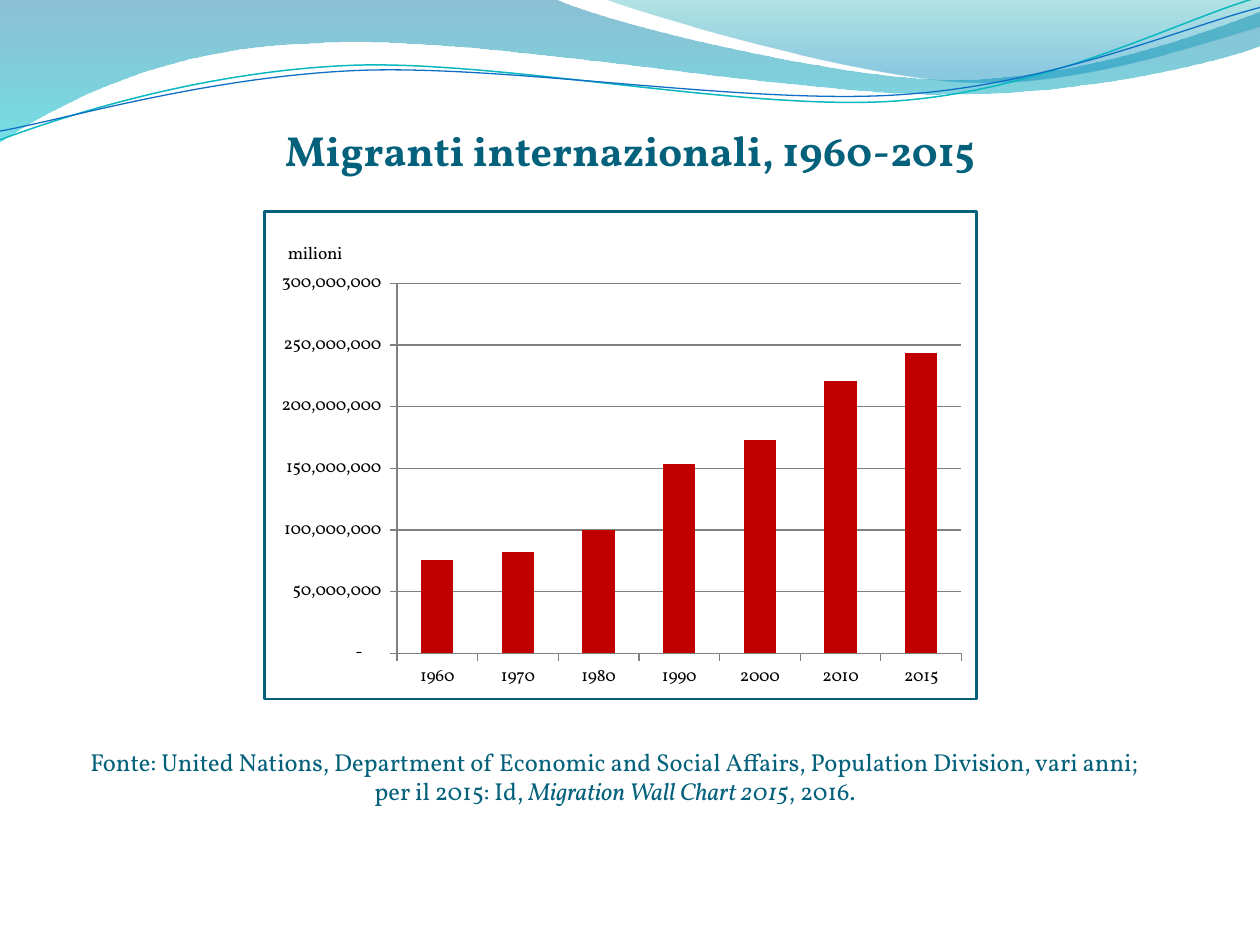
import math

import pptx
import pptx.chart.data
import pptx.dml.color
import pptx.enum.chart
import pptx.enum.text
import pptx.oxml
import pptx.oxml.ns
import pptx.util

Pt = pptx.util.Pt
COLOURS = {
    "teal": "04617B", "red": "C00000", "black": "000000", "grey": "808080",
    "deep": "0074A1", "aqua": "00C6CF", "sea": "00A1A9", "sky": "008BBF",
    "turquoise": "0AB8BF", "blue": "0F6FC6",
}
FONT = "Vollkorn"
TILT = 2.7
CHART_NS = pptx.oxml.ns.nsdecls("c", "a")
DRAW_NS = pptx.oxml.ns.nsdecls("a")


def rgb(name):
    return pptx.dml.color.RGBColor.from_string(COLOURS[name])


def apply(target, values):
    for key, value in values.items():
        setattr(target, key, value)


def turned(point, centre):
    angle = math.radians(TILT)
    x, y = point[0] - centre[0], point[1] - centre[1]
    return (centre[0] + x * math.cos(angle) - y * math.sin(angle),
            centre[1] + x * math.sin(angle) + y * math.cos(angle))


class SlideBuilder:
    def __init__(self, slide):
        self.slide = slide

    def outline(self, start, segments, close):
        points = [(Pt(x), Pt(y)) for x, y in [start, *sum(segments, [])]]
        builder = self.slide.shapes.build_freeform(*points[0], scale=1.0)
        builder.add_line_segments(points[1:], close=close)
        shape = builder.convert_to_shape()
        shape.shadow.inherit = False
        lines = iter(shape._element.xpath(".//a:path/a:lnTo"))
        for segment in segments:
            group = [next(lines) for _ in segment]
            if len(group) == 3:
                curve = pptx.oxml.parse_xml(f"<a:cubicBezTo {DRAW_NS}/>")
                group[0].addprevious(curve)
                for line in group:
                    curve.append(line[0])
                    line.getparent().remove(line)
        return shape

    def wave(self, start, segments, stops):
        shape = self.outline(start, segments, True)
        shape.line.fill.background()
        shape.fill.gradient()
        shape.fill.gradient_angle = 270
        for stop, (position, colour, _) in zip(shape.fill.gradient_stops, stops):
            stop.position = position
            stop.color.rgb = rgb(colour)
        tints = shape._element.spPr.xpath(".//a:gs/a:srgbClr")
        for tint, (_, _, opacity) in zip(tints, stops):
            tint.append(pptx.oxml.parse_xml(f'<a:alpha {DRAW_NS} val="{opacity * 1000}"/>'))

    def ribbon(self, centre, start, segments, colour, width):
        level = [[turned(point, centre) for point in segment] for segment in segments]
        shape = self.outline(turned(start, centre), level, False)
        shape.rotation = 360 - TILT
        shape.fill.background()
        shape.line.color.rgb = rgb(colour)
        shape.line.width = Pt(width)

    def text(self, box, paragraphs, size, bold=False):
        frame = self.slide.shapes.add_textbox(*map(Pt, box)).text_frame
        apply(frame, {"word_wrap": True,
                      "auto_size": pptx.enum.text.MSO_AUTO_SIZE.SHAPE_TO_FIT_TEXT})
        for index, runs in enumerate(paragraphs):
            paragraph = frame.add_paragraph() if index else frame.paragraphs[0]
            paragraph.alignment = pptx.enum.text.PP_ALIGN.CENTER
            for words, italic in runs:
                run = paragraph.add_run()
                run.text = words
                apply(run.font, {"name": FONT, "size": Pt(size), "bold": bold, "italic": italic})
                run.font.color.rgb = rgb("teal")

    def layout(self, box, place):
        width, height = box[2:]
        shares = [length / whole for length, whole in zip(place, (width, height) * 2)]
        values = {"xMode": "edge", "yMode": "edge", **dict(zip("xywh", shares))}
        if len(place) == 4:
            values = {"layoutTarget": "inner", **values}
        body = "".join(f'<c:{key} val="{value}"/>' for key, value in values.items())
        return pptx.oxml.parse_xml(
            f"<c:layout {CHART_NS}><c:manualLayout>{body}</c:manualLayout></c:layout>")

    def columns(self, box, title, years, migrants):
        data = pptx.chart.data.CategoryChartData()
        data.categories = years
        data.add_series("Series 1", migrants)
        chart = self.slide.shapes.add_chart(
            pptx.enum.chart.XL_CHART_TYPE.COLUMN_CLUSTERED, *map(Pt, box), data).chart
        label_font = {"name": FONT, "size": Pt(10), "bold": False}
        apply(chart, {"has_legend": False, "has_title": True})
        heading = chart.chart_title
        heading.include_in_layout = False
        heading.text_frame.text = title
        for font in (chart.font, heading.text_frame.paragraphs[0].runs[0].font):
            apply(font, label_font)
            font.color.rgb = rgb("black")

        plot = chart.plots[0]
        apply(plot, {"gap_width": 150, "vary_by_categories": False})
        bars = plot.series[0].format.fill
        bars.solid()
        bars.fore_color.rgb = rgb("red")

        amounts = chart.value_axis
        apply(amounts, {"minimum_scale": 0, "maximum_scale": 300000000,
                        "major_unit": 50000000, "has_major_gridlines": True})
        apply(amounts.tick_labels, {
            "number_format": '_-* #,##0_-;\\-* #,##0_-;_-* "-"??_-;_-@_',
            "number_format_is_linked": False})
        for axis in (chart.category_axis, amounts):
            axis.major_tick_mark = pptx.enum.chart.XL_TICK_MARK.OUTSIDE
        for part in (chart.category_axis, amounts, amounts.major_gridlines):
            part.format.line.color.rgb = rgb("grey")
            part.format.line.width = Pt(0.75)

        space = chart._chartSpace
        for old in space.xpath("c:chart/c:title/c:layout | c:chart/c:plotArea/c:layout"):
            old.getparent().remove(old)
        space.xpath("c:chart/c:title/c:tx")[0].addnext(self.layout(box, (11.4, 15.6)))
        space.xpath("c:chart/c:plotArea")[0].insert(
            0, self.layout(box, (75.9, 41.3, 323.8, 212.6)))
        space.xpath("c:chart")[0].addnext(pptx.oxml.parse_xml(
            f'<c:spPr {CHART_NS}><a:noFill/><a:ln w="{Pt(1.5)}"><a:solidFill>'
            f'<a:srgbClr val="{COLOURS["teal"]}"/></a:solidFill></a:ln></c:spPr>'))


def main():
    deck = pptx.Presentation()
    apply(deck, {"slide_width": Pt(720), "slide_height": Pt(540)})
    page = SlideBuilder(deck.slides.add_slide(deck.slide_layouts[6]))

    page.wave((0, 0), [
        [(316.8, -0.7)],
        [(342.7, 12.2), (478.1, 45.4), (545.8, 45.4)],
        [(614.2, 45.4), (689.8, 18.7), (720, 6.5)],
        [(720.7, 25.9)],
        [(707.8, 31.7), (626.4, 54.7), (537.1, 54)],
        [(447.8, 54), (275, 20.2), (185, 24.5)],
        [(92.9, 25.9), (33.1, 59.8), (-0.7, 81.4)],
    ], [(0, "deep", 45), (1, "aqua", 55)])
    page.wave((344.9, -0.7), [
        [(366.5, 7.9), (491, 44.6), (553.7, 46.8)],
        [(616.3, 49.7), (691.9, 23), (720, 15.1)],
        [(720, 0)],
    ], [(0, "sea", 30), (0.8, "sky", 45)])
    page.ribbon((359.3, 41.4), (0, 79.9), [
        [(34.6, 67), (113.8, 41), (199.4, 37.4)],
        [(284.4, 33.8), (427, 64.1), (513.4, 57.6)],
        [(599.8, 51.1), (675.4, 10.8), (718.6, -1.4)],
    ], "turquoise", 0.85)
    page.ribbon((359.6, 42.5), (0, 74.9), [
        [(33.8, 69.1), (118.1, 43.9), (203.8, 40.3)],
        [(290.2, 36.7), (429.8, 60.5), (516.2, 54)],
        [(601.9, 48.2), (677.5, 15.1), (720, 4.3)],
    ], "blue", 0.75)

    page.text((0, 67.7, 720, 36), [[("Migranti internazionali, 1960-2015", False)]], 24, bold=True)
    page.text((16.6, 423.2, 669.6, 41), [
        [("Fonte: United Nations, Department of Economic and Social Affairs, "
          "Population Division, vari anni;", False)],
        [("per il 2015: Id, ", False), ("Migration Wall Chart 2015", True), (", 2016.", False)],
    ], 14)
    page.columns((150.5, 120.2, 408.2, 280.1), "milioni",
                 ["1960", "1970", "1980", "1990", "2000", "2010", "2015"],
                 [millions * 1000000 for millions in (76, 82, 100, 154, 173, 221, 244)])
    deck.save("out.pptx")


if __name__ == "__main__":
    main()
